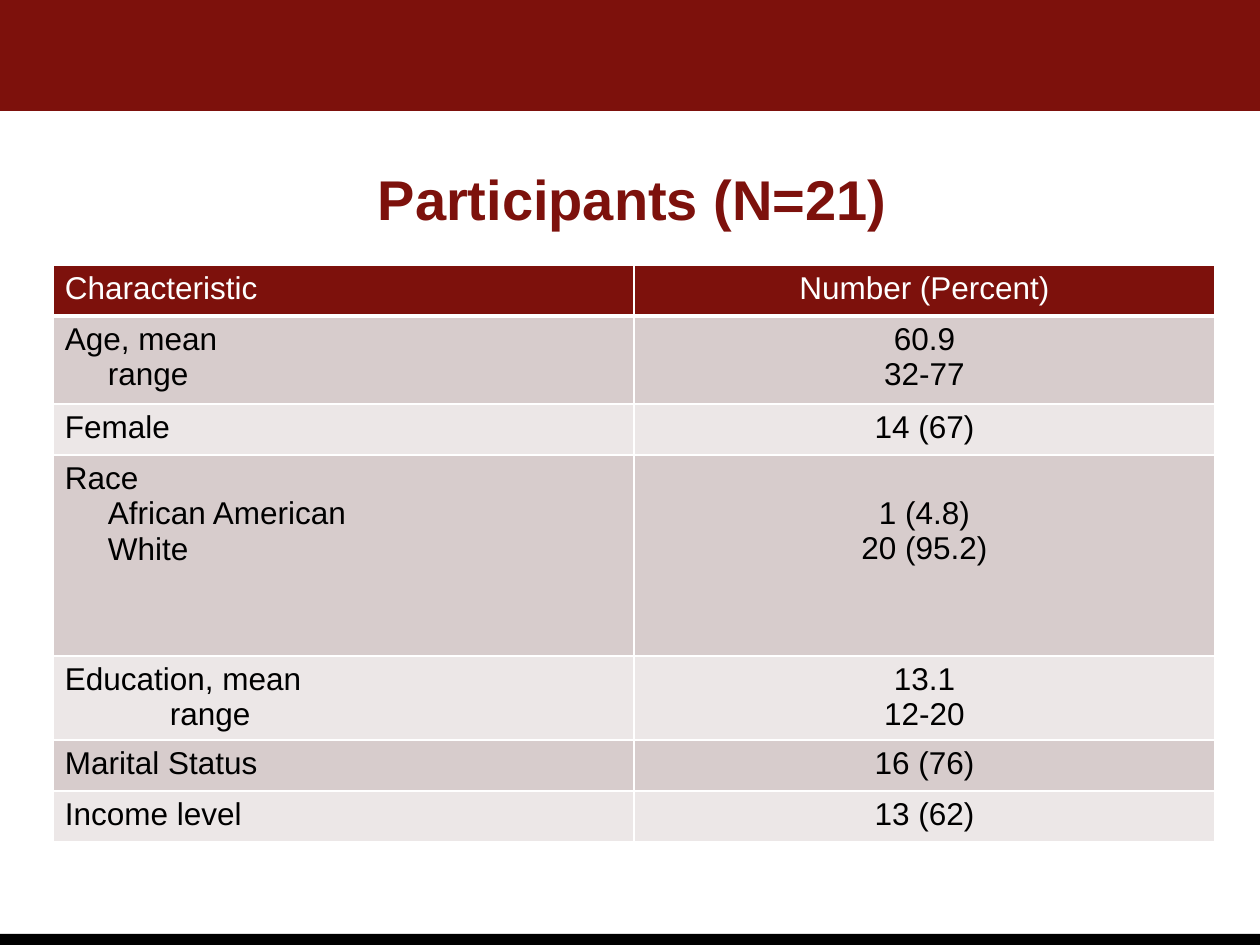
from lxml import etree
from pptx import Presentation
from pptx.dml.color import RGBColor
from pptx.enum.shapes import MSO_SHAPE
from pptx.enum.text import MSO_ANCHOR, PP_ALIGN
from pptx.oxml.ns import qn
from pptx.util import Emu, Pt

RECTANGLE = MSO_SHAPE.RECTANGLE
MIDDLE = MSO_ANCHOR.MIDDLE
LEFT, CENTER = PP_ALIGN.LEFT, PP_ALIGN.CENTER
TITLE_ONLY = 5
SLIDE_W, SLIDE_H = 1260, 945
MAROON, WHITE, BLACK = "7D110C", "FFFFFF", "000000"
BANDS = ("ECE7E7", "D7CCCC")
FONT = "Arial"
LINE = 35
PAD_X, PAD_Y = 12, 6
INDENT, DEEP_INDENT = 43, 105

# height, labels as (text, indent), values, lines skipped above the values
ROWS = [
    (51, [("Characteristic", 0)], ["Number (Percent)"], 0),
    (88, [("Age, mean", 0), ("range", INDENT)], ["60.9", "32-77"], 0),
    (51, [("Female", 0)], ["14 (67)"], 0),
    (201, [("Race", 0), ("African American", INDENT), ("White", INDENT)],
     ["1 (4.8)", "20 (95.2)"], 1),
    (84, [("Education, mean", 0), ("range", DEEP_INDENT)], ["13.1", "12-20"], 0),
    (51, [("Marital Status", 0)], ["16 (76)"], 0),
    (51, [("Income level", 0)], ["13 (62)"], 0),
]


def px(length):
    return Emu(round(length * 914400 / 126))


def color(code):
    return RGBColor.from_string(code)


def add_run(paragraph, text, size, code, bold=False):
    run = paragraph.add_run()
    run.text = text
    run.font.name = FONT
    run.font.size = Pt(size)
    run.font.bold = bold
    run.font.color.rgb = color(code)


def add_bar(slide, top, height, code):
    bar = slide.shapes.add_shape(RECTANGLE, 0, px(top), px(SLIDE_W), px(height))
    bar.shadow.inherit = False
    bar.fill.solid()
    bar.fill.fore_color.rgb = color(code)
    bar.line.fill.background()


def set_title(slide, text):
    title = slide.shapes.title
    title.left, title.top = px(49), px(131)
    title.width, title.height = px(1167), px(134)
    title.text_frame.vertical_anchor = MIDDLE
    heading = title.text_frame.paragraphs[0]
    heading.alignment = CENTER
    add_run(heading, text, 32, MAROON, bold=True)


def set_borders(cell, bottom_width):
    properties = cell._tc.get_or_add_tcPr()
    widths = {"a:lnL": 1, "a:lnR": 1, "a:lnT": 1, "a:lnB": bottom_width}
    for position, (side, width) in enumerate(widths.items()):
        border = etree.Element(qn(side), w=str(Pt(width)))
        fill = etree.SubElement(border, qn("a:solidFill"))
        etree.SubElement(fill, qn("a:srgbClr"), val=WHITE)
        properties.insert(position, border)


def fill_cell(cell, lines, alignment, skipped, is_header, band):
    cell.margin_left = cell.margin_right = px(PAD_X)
    cell.margin_top = px(PAD_Y + skipped * LINE)
    cell.margin_bottom = px(PAD_Y)
    cell.fill.solid()
    cell.fill.fore_color.rgb = color(MAROON if is_header else band)
    set_borders(cell, 3 if is_header else 1)
    frame = cell.text_frame
    for index, (text, indent) in enumerate(lines):
        paragraph = frame.add_paragraph() if index else frame.paragraphs[0]
        paragraph.alignment = alignment
        if indent:
            paragraph._p.get_or_add_pPr().set("marL", str(px(indent)))
        add_run(paragraph, text, 18, WHITE if is_header else BLACK)


def add_participants(slide):
    total = sum(height for height, *_ in ROWS)
    table = slide.shapes.add_table(
        len(ROWS), 2, px(53), px(265), px(1162), px(total)).table
    for index, (height, labels, values, skipped) in enumerate(ROWS):
        table.rows[index].height = px(height)
        is_header, band = index == 0, BANDS[index % 2]
        numbers = [(value, 0) for value in values]
        fill_cell(table.cell(index, 0), labels, LEFT, 0, is_header, band)
        fill_cell(table.cell(index, 1), numbers, CENTER, skipped, is_header, band)


def main():
    deck = Presentation()
    deck.slide_width, deck.slide_height = px(SLIDE_W), px(SLIDE_H)
    slide = deck.slides.add_slide(deck.slide_layouts[TITLE_ONLY])
    add_bar(slide, 934, 11, BLACK)
    add_bar(slide, 0, 111, MAROON)
    set_title(slide, "Participants (N=21)")
    add_participants(slide)
    deck.save("out.pptx")


if __name__ == "__main__":
    main()
